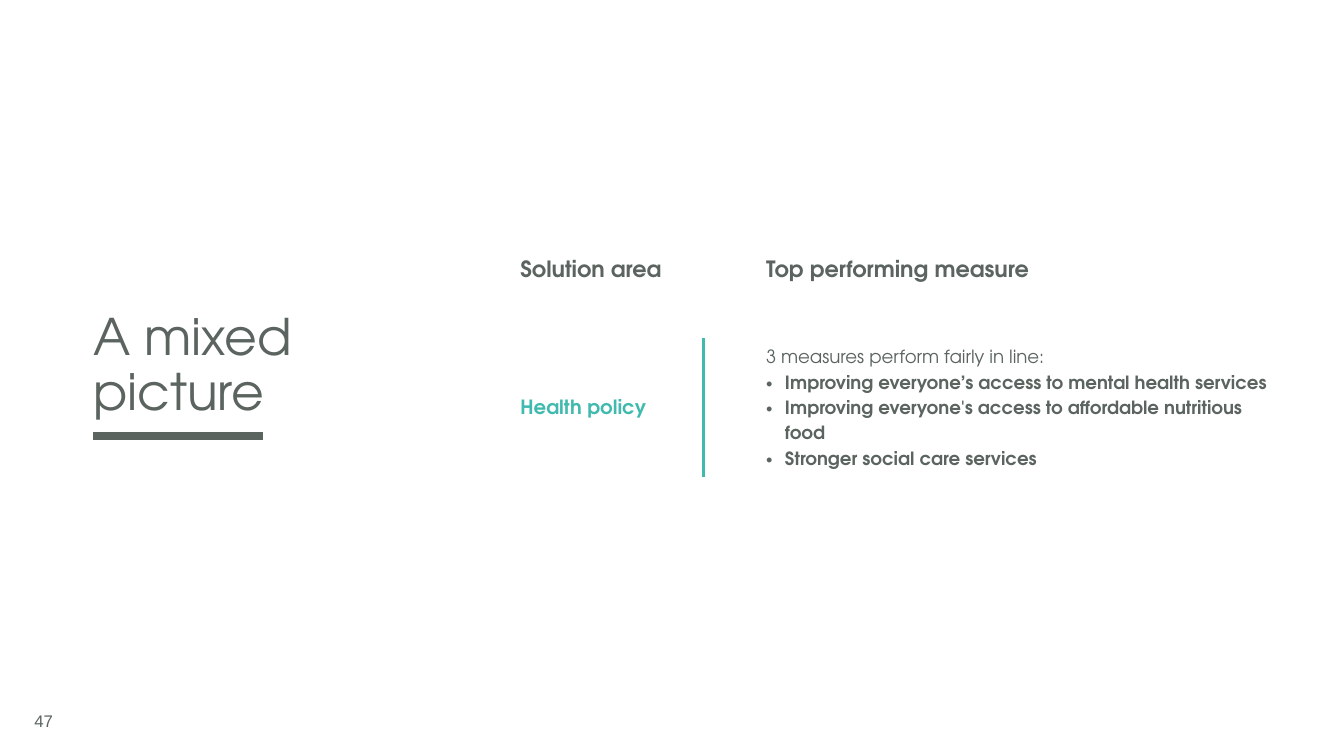
from dataclasses import dataclass

import pptx
import pptx.dml.color
import pptx.enum.shapes
import pptx.enum.text
import pptx.oxml
import pptx.oxml.ns
import pptx.util
from pptx.util import Pt

ANCHOR = pptx.enum.text.MSO_ANCHOR


@dataclass(frozen=True)
class Theme:
    grey: str = "5B645F"
    teal: str = "40BAAE"
    white: str = "FFFFFF"
    font: str = "TeX Gyre Adventor"
    number_font: str = "Arial"
    title: int = 36
    heading: int = 16
    area: int = 14
    body: int = 13
    number: int = 12


THEME = Theme()


def color(value):
    return pptx.dml.color.RGBColor.from_string(value)


def add_xml(parent, tag, content="", **attributes):
    """Append one drawing element built from its tag, content and attributes."""
    namespace = pptx.oxml.ns.nsdecls("a")
    values = " ".join(f'{name}="{value}"' for name, value in attributes.items())
    parent.append(pptx.oxml.parse_xml(f"<a:{tag} {namespace} {values}>{content}</a:{tag}>"))


def add_run(paragraph, text, size, ink=THEME.grey, bold=False, font=THEME.font):
    run = paragraph.add_run()
    run.text = text
    run.font.name = font
    run.font.size = Pt(size)
    run.font.bold = bold
    run.font.color.rgb = color(ink)


def add_text(slide, left, top, width, height, anchor, side_inset=7.2):
    """Add a wrapping text box and return its first paragraph."""
    frame = slide.shapes.add_textbox(Pt(left), Pt(top), Pt(width), Pt(height)).text_frame
    frame.word_wrap = True
    frame.vertical_anchor = anchor
    frame.margin_left = frame.margin_right = Pt(side_inset)
    return frame.paragraphs[0]


def add_line(slide, start, end, ink, width):
    line = slide.shapes.add_connector(
        pptx.enum.shapes.MSO_CONNECTOR.STRAIGHT, *(Pt(value) for value in start + end))
    line.line.color.rgb = color(ink)
    line.line.width = Pt(width)
    add_xml(line._element.spPr, "effectLst")


def style_cell(cell, anchor):
    """Give a cell white borders and fill, and return its first paragraph."""
    properties = cell._tc.get_or_add_tcPr()
    for side in ("lnL", "lnR", "lnT", "lnB"):
        add_xml(properties, side,
                f'<a:solidFill><a:srgbClr val="{THEME.white}"/></a:solidFill>', w=Pt(1))
    cell.fill.solid()
    cell.fill.fore_color.rgb = color(THEME.white)
    cell.vertical_anchor = anchor
    return cell.text_frame.paragraphs[0]


def add_bullet(text_frame, text):
    paragraph = text_frame.add_paragraph()
    paragraph.line_spacing = 1.5
    properties = paragraph._p.get_or_add_pPr()
    properties.set("marL", str(Pt(13.5)))
    properties.set("indent", str(-Pt(13.5)))
    add_xml(properties, "buFont", typeface="Arial")
    add_xml(properties, "buChar", char="•")
    add_run(paragraph, text, THEME.body, bold=True)


def add_measures_table(slide, headings, area, introduction, measures):
    columns, rows = (175.5, 381), (62.5, 175)
    table = slide.shapes.add_table(
        2, 2, Pt(364.5), Pt(142.5), Pt(sum(columns)), Pt(sum(rows))).table
    for column, width in zip(table.columns, columns):
        column.width = Pt(width)
    for row, height in zip(table.rows, rows):
        row.height = Pt(height)

    for index, heading in enumerate(headings):
        paragraph = style_cell(table.cell(0, index), ANCHOR.BOTTOM)
        add_run(paragraph, heading, THEME.heading, bold=True)
    paragraph = style_cell(table.cell(1, 0), ANCHOR.MIDDLE)
    add_run(paragraph, area, THEME.area, THEME.teal, bold=True)

    measure_cell = table.cell(1, 1)
    add_run(style_cell(measure_cell, ANCHOR.MIDDLE), introduction, THEME.body)
    for measure in measures:
        add_bullet(measure_cell.text_frame, measure)


def main():
    presentation = pptx.Presentation()
    presentation.slide_width, presentation.slide_height = Pt(960), Pt(540)
    slide = presentation.slides.add_slide(presentation.slide_layouts[6])

    # Title with its underline
    title = add_text(slide, 66.5, 142.5, 269, 162, ANCHOR.BOTTOM, side_inset=0)
    title.line_spacing = 0.9
    add_run(title, "A mixed picture", THEME.title)
    add_line(slide, (66.5, 311.5), (188, 311.5), THEME.grey, 6)

    # Slide number
    number = add_text(slide, 17.5, 500.5, 324, 29, ANCHOR.MIDDLE)
    add_run(number, "47", THEME.number, font=THEME.number_font)

    # Measures by solution area, with the divider
    add_measures_table(
        slide,
        ("Solution area", "Top performing measure"),
        "Health policy",
        "3 measures perform fairly in line:",
        ("Improving everyone’s access to mental health services",
         "Improving everyone's access to affordable nutritious food",
         "Stronger social care services"))
    add_line(slide, (502.5, 241.5), (502.5, 340.5), THEME.teal, 2.25)

    presentation.save("out.pptx")


if __name__ == "__main__":
    main()
